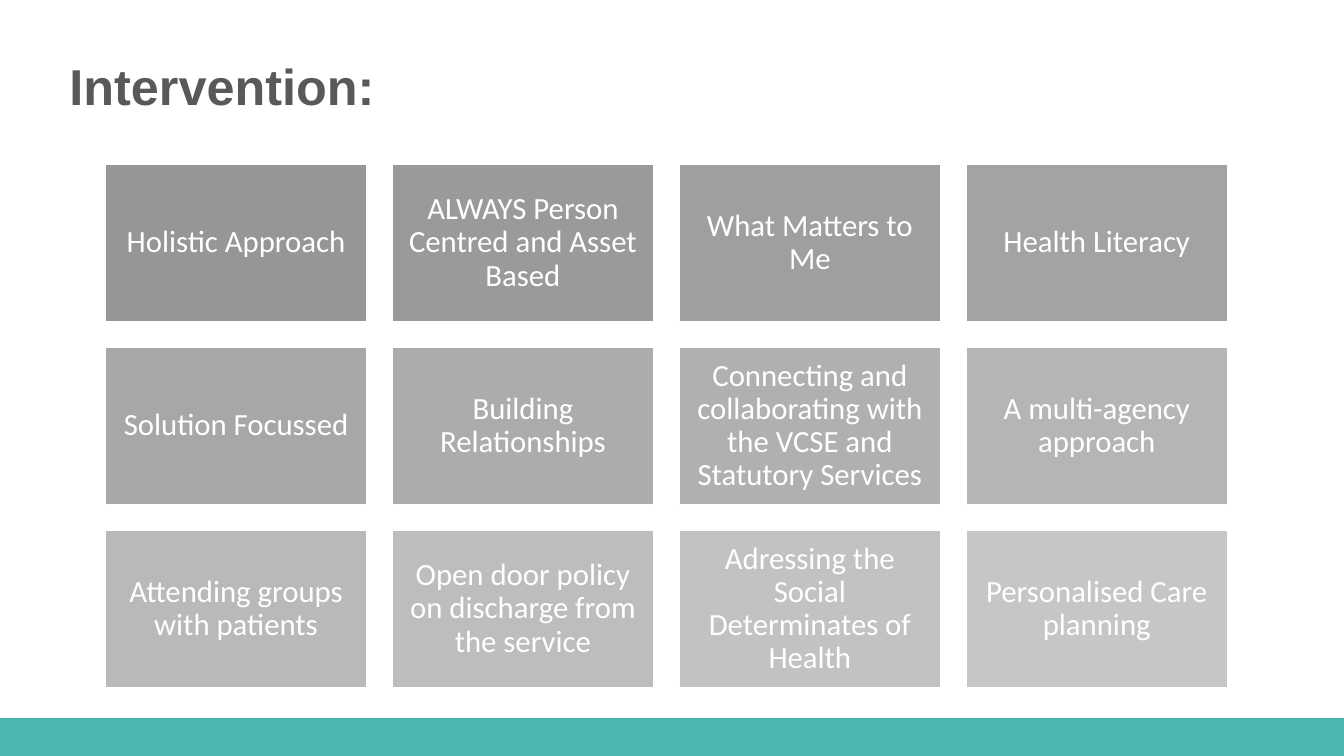
"""Build the Intervention slide: a title, a grid of shaded boxes and a footer band."""
from pptx import Presentation
from pptx.dml.color import RGBColor
from pptx.enum.shapes import MSO_SHAPE as Shape
from pptx.enum.text import MSO_ANCHOR as Anchor, PP_ALIGN as Align
from pptx.util import Cm, Pt

COLOURS = {"white": "FFFFFF", "teal": "4AB7AE", "title": "595959"}
APPROACHES = [
    "Holistic Approach",
    "ALWAYS Person Centred and Asset Based",
    "What Matters to Me",
    "Health Literacy",
    "Solution Focussed",
    "Building Relationships",
    "Connecting and collaborating with the VCSE and Statutory Services",
    "A multi-agency approach",
    "Attending groups with patients",
    "Open door policy on discharge from the service",
    "Adressing the Social Determinates of Health",
    "Personalised Care planning",
]
COLUMNS = 4
GRID_LEFT, GRID_TOP = 2.66, 4.15
BOX_WIDTH, BOX_HEIGHT = 6.58, 3.95
COLUMN_STEP, ROW_STEP = 7.23, 4.61
DARKEST, LIGHTEST = 150, 198


class SlideBuilder:
    def __init__(self, slide):
        self.slide = slide

    def rectangle(self, left, top, width, height, fill, line):
        shape = self.slide.shapes.add_shape(
            Shape.RECTANGLE, Cm(left), Cm(top), Cm(width), Cm(height))
        shape.shadow.inherit = False
        shape.fill.solid()
        shape.fill.fore_color.rgb = RGBColor.from_string(fill)
        shape.line.color.rgb = RGBColor.from_string(line)
        shape.line.width = Pt(1)
        return shape

    def add_text(self, frame, text, size, font, colour, align, bold=False):
        frame.word_wrap = True
        paragraph = frame.paragraphs[0]
        paragraph.alignment = align
        paragraph.line_spacing = 0.9
        run = paragraph.add_run()
        run.text = text
        run.font.size = Pt(size)
        run.font.name = font
        run.font.bold = bold
        run.font.color.rgb = RGBColor.from_string(colour)

    def title(self, left, top, width, height, text):
        box = self.slide.shapes.add_textbox(Cm(left), Cm(top), Cm(width), Cm(height))
        self.add_text(box.text_frame, text, 36, "Arial", COLOURS["title"], Align.LEFT, bold=True)

    def box(self, left, top, fill, text):
        shape = self.rectangle(left, top, BOX_WIDTH, BOX_HEIGHT, fill, COLOURS["white"])
        frame = shape.text_frame
        frame.vertical_anchor = Anchor.MIDDLE
        frame.margin_left = frame.margin_right = Cm(0.23)
        frame.margin_top = frame.margin_bottom = Cm(0.23)
        self.add_text(frame, text, 22, "Calibri", COLOURS["white"], Align.CENTER)


def main():
    presentation = Presentation()
    presentation.slide_width = Cm(33.87)
    presentation.slide_height = Cm(19.05)
    builder = SlideBuilder(presentation.slides.add_slide(presentation.slide_layouts[6]))

    builder.rectangle(0, 18.11, 33.87, 0.94, COLOURS["teal"], COLOURS["teal"])
    builder.title(1.5, 1.45, 14.45, 1.63, "Intervention:")

    shade_step = (LIGHTEST - DARKEST) / (len(APPROACHES) - 1)
    for index, approach in enumerate(APPROACHES):
        row, column = divmod(index, COLUMNS)
        grey = f"{round(DARKEST + index * shade_step):02X}" * 3
        builder.box(GRID_LEFT + column * COLUMN_STEP, GRID_TOP + row * ROW_STEP, grey, approach)

    presentation.save("out.pptx")


if __name__ == "__main__":
    main()
